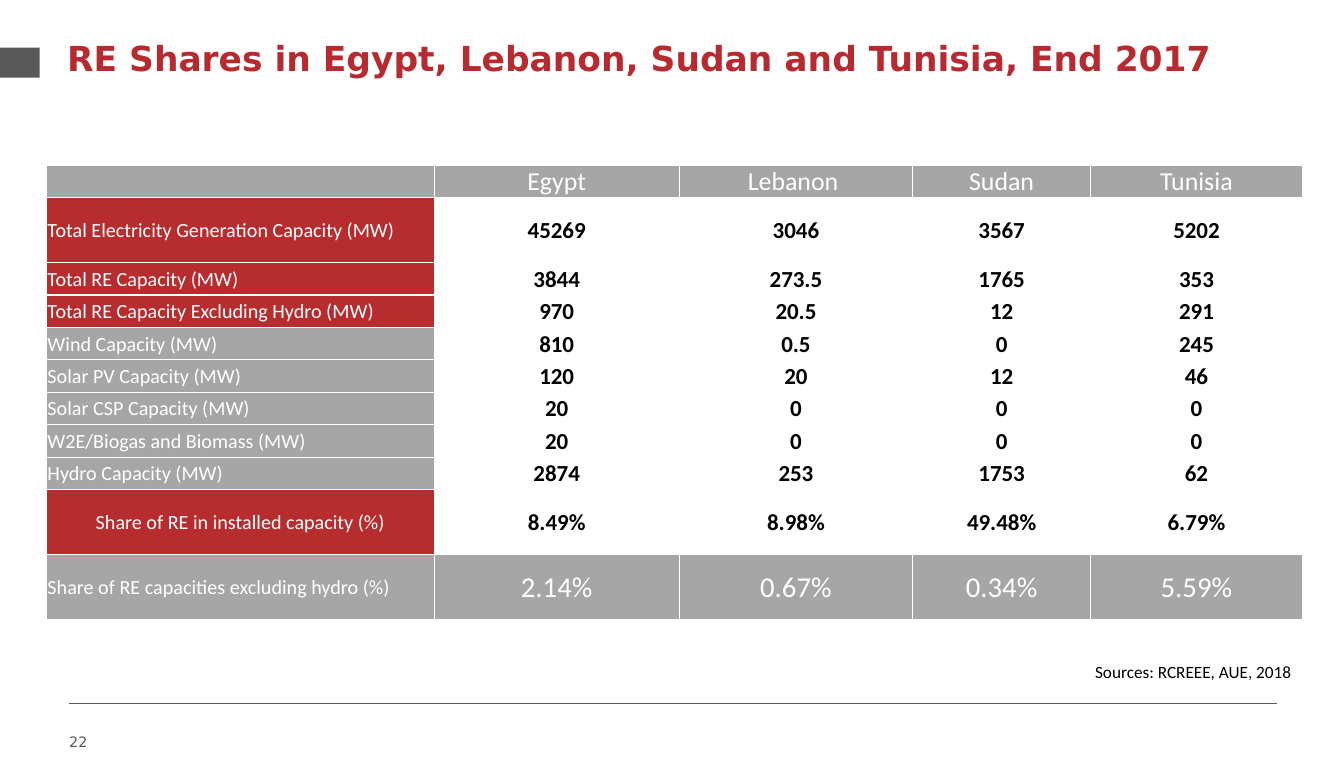
from lxml import etree
from pptx import Presentation
from pptx.dml.color import RGBColor
from pptx.enum import shapes, text
from pptx.oxml import ns
from pptx.util import Pt

RED, CELL_RED = "B72A2F", "B72C2F"
GREY, DARK, WHITE, BLACK = "A6A6A6", "595959", "FFFFFF", "000000"
LEFT, CENTER, RIGHT = text.PP_ALIGN.LEFT, text.PP_ALIGN.CENTER, text.PP_ALIGN.RIGHT

COLUMN_WIDTHS = [270, 170.6, 162.7, 123.8, 147.6]
ROW_UNIT = 22.6
COUNTRIES = ["", "Egypt", "Lebanon ", "Sudan", "Tunisia"]
# label fill, height in row units, label, one value for each country
ROWS = [
    (CELL_RED, 2, "Total Electricity Generation Capacity (MW)", "45269", "3046", "3567", "5202"),
    (CELL_RED, 1, "Total RE Capacity (MW)", "3844", "273.5", "1765", "353"),
    (CELL_RED, 1, "Total RE Capacity Excluding Hydro (MW)", "970", "20.5", "12", "291"),
    (GREY, 1, "Wind Capacity (MW)", "810", "0.5", "0", "245"),
    (GREY, 1, "Solar PV Capacity (MW)", "120", "20", "12", "46"),
    (GREY, 1, "Solar CSP Capacity (MW)", "20", "0", "0", "0"),
    (GREY, 1, "W2E/Biogas and Biomass (MW)", "20", "0", "0", "0"),
    (GREY, 1, "Hydro Capacity (MW)", "2874", "253", "1753", "62"),
    (CELL_RED, 2, "Share of RE in installed capacity (%)", "8.49%", "8.98%", "49.48%", "6.79%"),
    (GREY, 2, "Share of RE capacities excluding hydro (%)", "2.14%", "0.67%", "0.34%", "5.59%"),
]


def color(value):
    return RGBColor.from_string(value)


def write(para, words, size, ink, font="Calibri", bold=False, align=LEFT):
    para.text = words
    para.alignment = align
    para.font.name = font
    para.font.size = Pt(size)
    para.font.bold = bold
    para.font.color.rgb = color(ink)


def add_text(page, left, top, width, height, words, size, ink, side_inset=0, **style):
    box = page.shapes.add_textbox(Pt(left), Pt(top), Pt(width), Pt(height))
    frame = box.text_frame
    frame.word_wrap = True
    frame.margin_left = frame.margin_right = Pt(side_inset)
    write(frame.paragraphs[0], words, size, ink, **style)


def add_heading(page, left, top, width, height):
    # Tab at the slide edge
    tab = page.shapes.add_shape(shapes.MSO_SHAPE.RECTANGLE, 0, Pt(33.1), Pt(27.6), Pt(21))
    tab.shadow.inherit = False
    tab.fill.solid()
    tab.fill.fore_color.rgb = color(DARK)
    tab.line.fill.background()
    # Title
    add_text(page, left, top, width, height,
             "RE Shares in Egypt, Lebanon, Sudan and Tunisia, End 2017",
             24, RED, font="DejaVu Sans", bold=True)


def fill_cell(cell, words, fill, size, ink, bold=False, align=CENTER,
              anchor=text.MSO_ANCHOR.MIDDLE):
    cell.fill.solid()
    cell.fill.fore_color.rgb = color(fill)
    cell.margin_left = cell.margin_right = cell.margin_top = Pt(0.7)
    cell.margin_bottom = 0
    cell.vertical_anchor = anchor
    write(cell.text_frame.paragraphs[0], words, size, ink, bold=bold, align=align)


def add_capacity_table(page, left, top):
    heights = [ROW_UNIT] + [ROW_UNIT * units for _, units, *_ in ROWS]
    table = page.shapes.add_table(
        len(heights), len(COLUMN_WIDTHS), Pt(left), Pt(top),
        Pt(sum(COLUMN_WIDTHS)), Pt(sum(heights))).table
    for column, width in zip(table.columns, COLUMN_WIDTHS):
        column.width = Pt(width)
    for row, height in zip(table.rows, heights):
        row.height = Pt(height)

    # Header row
    for index, country in enumerate(COUNTRIES):
        fill_cell(table.cell(0, index), country, GREY, 18, WHITE,
                  anchor=text.MSO_ANCHOR.BOTTOM)

    # Labels and values; the last row is a grey summary band
    for row, (label_fill, _, label, *values) in enumerate(ROWS, 1):
        label_align = CENTER if label.startswith("Share of RE in ") else LEFT
        fill_cell(table.cell(row, 0), label, label_fill, 14, WHITE, align=label_align)
        summary = row == len(ROWS)
        fill, size, ink = (GREY, 20, WHITE) if summary else (WHITE, 16, BLACK)
        for column, value in enumerate(values, 1):
            fill_cell(table.cell(row, column), value, fill, size, ink, bold=not summary)


def add_footer(page, left, top, width):
    # Rule
    rule = page.shapes.add_connector(shapes.MSO_CONNECTOR.STRAIGHT,
                                     Pt(left), Pt(top), Pt(left + width), Pt(top))
    rule.line.color.rgb = color(DARK)
    rule.line.width = Pt(0.75)
    etree.SubElement(rule.element.spPr, ns.qn("a:effectLst"))
    # Page number
    add_text(page, left, top + 17.3, 218, 37.4, "22", 10, DARK, font="DejaVu Sans")


def main():
    deck = Presentation()
    deck.slide_width, deck.slide_height = Pt(936), Pt(540)
    page = deck.slides.add_slide(deck.slide_layouts[6])
    add_heading(page, 46.8, 22.3, 842.4, 69.8)
    add_capacity_table(page, 32.4, 115.2)
    add_text(page, 385.2, 457.2, 521.3, 21.6, "Sources: RCREEE, AUE, 2018",
             12, BLACK, side_inset=7.2, align=RIGHT)
    add_footer(page, 48.2, 490.3, 841)
    deck.save("out.pptx")


if __name__ == "__main__":
    main()
